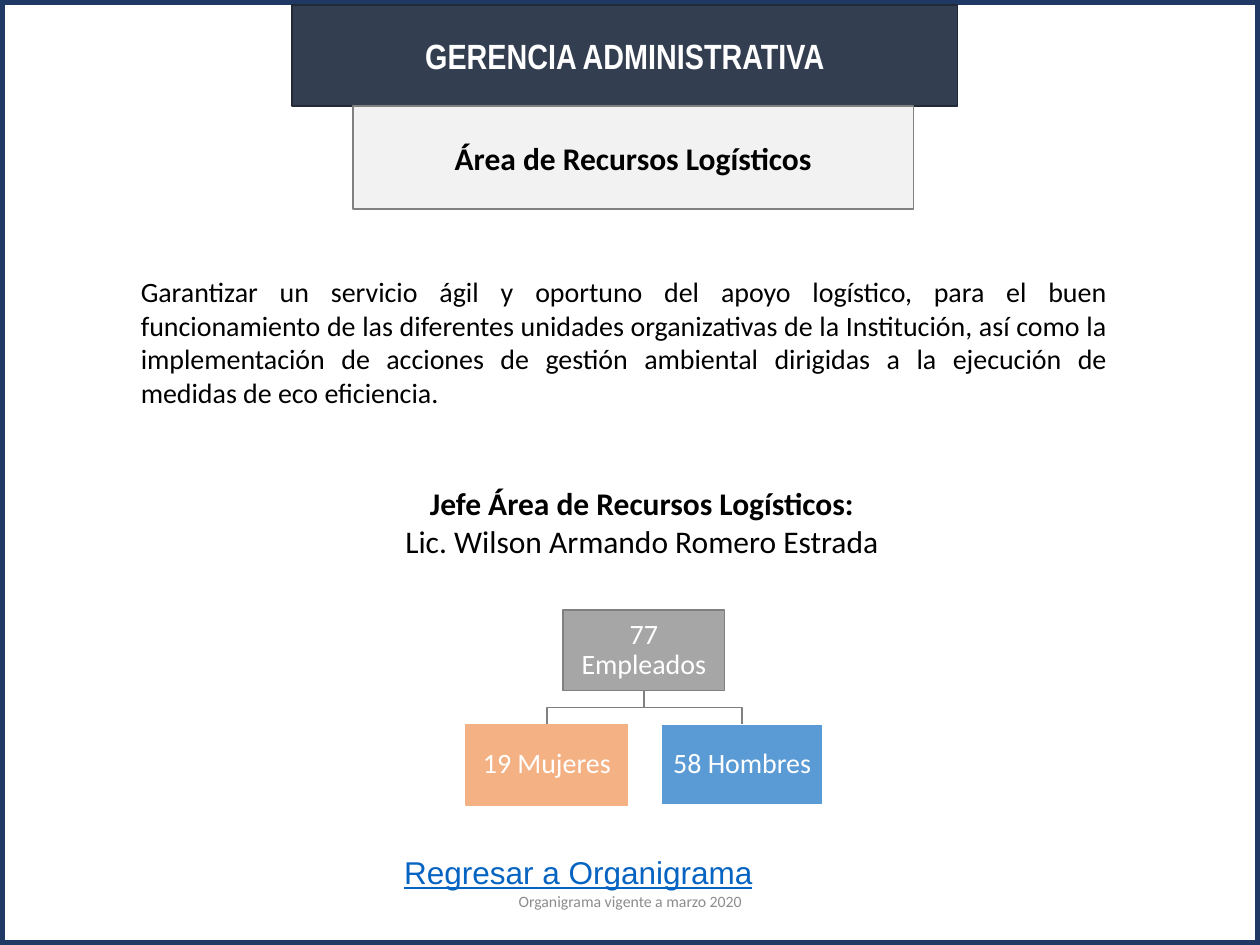
from pptx import Presentation
from pptx.dml.color import RGBColor
from pptx.enum.shapes import MSO_SHAPE
from pptx.enum.text import MSO_ANCHOR, MSO_AUTO_SIZE, PP_ALIGN
from pptx.util import Pt

RECT = MSO_SHAPE.RECTANGLE
TOP, MIDDLE = MSO_ANCHOR.TOP, MSO_ANCHOR.MIDDLE
LEFT, CENTER, JUSTIFY = PP_ALIGN.LEFT, PP_ALIGN.CENTER, PP_ALIGN.JUSTIFY
GROW, FIXED = MSO_AUTO_SIZE.SHAPE_TO_FIT_TEXT, MSO_AUTO_SIZE.NONE


def rgb(value):
    return RGBColor.from_string(value)


def write(sp, lines, size, font, color, align, anchor, bold=False):
    tf = sp.text_frame
    tf.word_wrap = True
    tf.vertical_anchor = anchor
    tf.text = "\n".join(lines)
    for p in tf.paragraphs:
        p.alignment = align
        for r in p.runs:
            r.font.size = Pt(size)
            r.font.name = font
            r.font.bold = bold
            r.font.color.rgb = rgb(color)
    return tf


prs = Presentation()
prs.slide_width, prs.slide_height = Pt(720), Pt(540)
s = prs.slides.add_slide(prs.slide_layouts[6])

frame = s.shapes.add_shape(RECT, 0, 0, Pt(720), Pt(540))
frame.shadow.inherit = False
frame.fill.background()
frame.line.color.rgb = rgb("203864")
frame.line.width = Pt(6)

box_w, box_h = 92.2, 46.1
top_x, top_y, child_y = 321.8, 348.5, 414
child_xs = [266.4, 378]
stem_x, stem_y = top_x + box_w / 2, top_y + box_h
bar_y = (stem_y + child_y) / 2

for x in child_xs:
    end_x = x + box_w / 2
    fb = s.shapes.build_freeform(Pt(stem_x), Pt(stem_y))
    fb.add_line_segments(
        [(Pt(stem_x), Pt(bar_y)), (Pt(end_x), Pt(bar_y)), (Pt(end_x), Pt(child_y))],
        close=False,
    )
    branch = fb.convert_to_shape()
    branch.shadow.inherit = False
    branch.fill.background()
    branch.line.color.rgb = rgb("808080")
    branch.line.width = Pt(1)

headings = [
    ("GERENCIA ADMINISTRATIVA", 167, 2.9, 380.2, 57.6, "333F50", "222A35", 20, "Arial Narrow", "FFFFFF"),
    ("Área de Recursos Logísticos", 201.6, 60.5, 320.4, 59, "F2F2F2", "808080", 18, "Calibri", "000000"),
]
staff = [
    ("77 Empleados", top_x, top_y, "A6A6A6", "808080"),
    ("19 Mujeres", child_xs[0], child_y, "F4B183", "F4B183"),
    ("58 Hombres", child_xs[1], child_y, "5B9BD5", "FFFFFF"),
]
boxes = headings + [
    (text, x, y, box_w, box_h, fill, line, 16, "Calibri", "FFFFFF")
    for text, x, y, fill, line in staff
]
for i, (text, x, y, w, h, fill, line, size, font, color) in enumerate(boxes):
    is_heading = i < len(headings)
    sp = s.shapes.add_shape(RECT, Pt(x), Pt(y), Pt(w), Pt(h))
    sp.shadow.inherit = False
    sp.fill.solid()
    sp.fill.fore_color.rgb = rgb(fill)
    sp.line.color.rgb = rgb(line)
    sp.line.width = Pt(1)
    tf = write(sp, [text], size, font, color, CENTER, MIDDLE, is_heading)
    if not is_heading:
        tf.margin_left = tf.margin_right = tf.margin_top = tf.margin_bottom = Pt(0.72)
        tf.paragraphs[0].line_spacing = 0.9

purpose = (
    "Garantizar un servicio ágil y oportuno del apoyo logístico, para el buen "
    "funcionamiento de las diferentes unidades organizativas de la Institución, "
    "así como la implementación de acciones de gestión ambiental dirigidas a la "
    "ejecución de medidas de eco eficiencia."
)
chief = ["Jefe Área de Recursos Logísticos:", "Lic. Wilson Armando Romero Estrada"]
texts = [
    ([purpose], 73.4, 153.4, 566.6, 85, 16, "Calibri", "000000", JUSTIFY, TOP, GROW),
    (chief, 212.4, 272.9, 308.9, 51, 18, "Calibri", "000000", CENTER, TOP, GROW),
    (["Regresar a Organigrama"], 223.9, 483.8, 235.4, 28.8, 18, "Arial", "0563C1", LEFT, TOP, GROW),
    (["Organigrama vigente a marzo 2020"], 238.3, 500.4, 243.4, 28.8, 9, "Calibri", "8C8C8C", CENTER, MIDDLE, FIXED),
]
frames = []
for lines, x, y, w, h, size, font, color, align, anchor, fit in texts:
    sp = s.shapes.add_textbox(Pt(x), Pt(y), Pt(w), Pt(h))
    tf = write(sp, lines, size, font, color, align, anchor)
    tf.auto_size = fit
    frames.append(tf)

frames[1].paragraphs[0].runs[0].font.bold = True
frames[2].paragraphs[0].runs[0].font.underline = True

prs.save("out.pptx")
